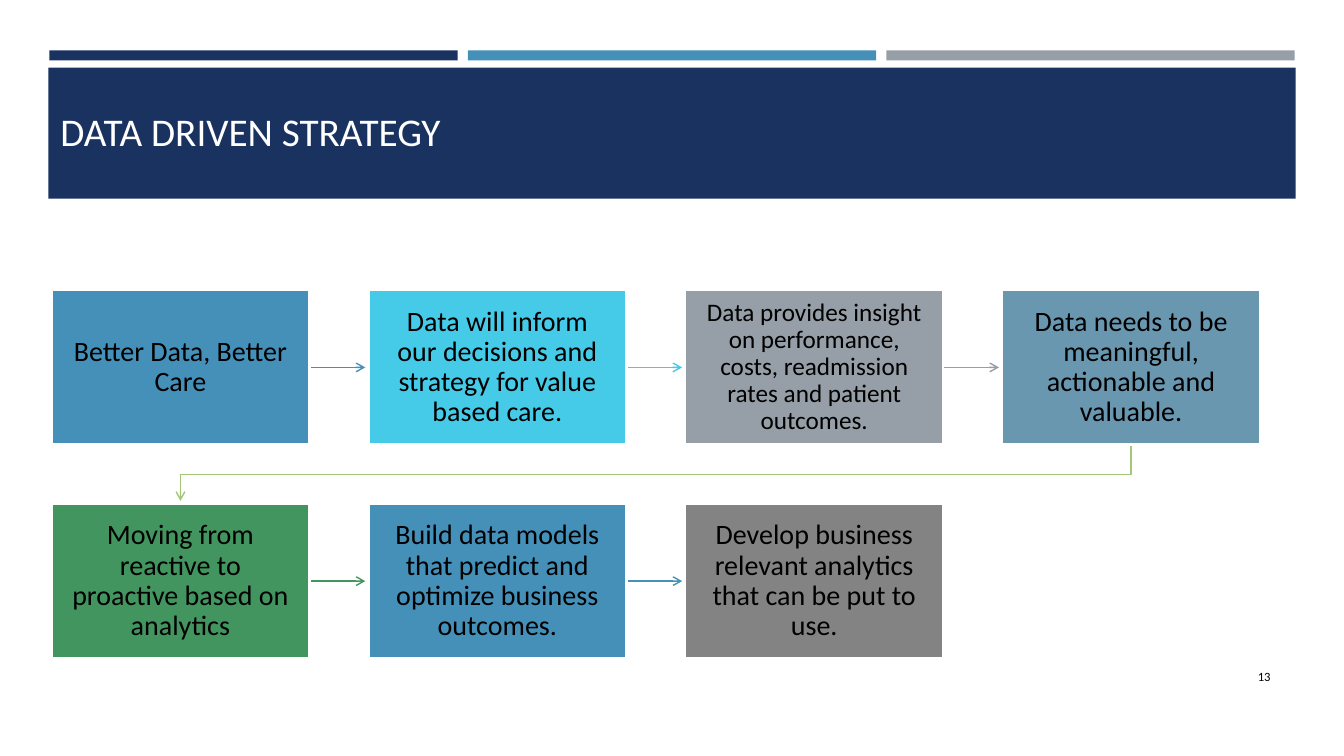
from lxml.etree import SubElement
from pptx import Presentation
from pptx.dml.color import RGBColor
from pptx.enum.shapes import MSO_CONNECTOR, MSO_SHAPE
from pptx.enum.text import MSO_ANCHOR, PP_ALIGN
from pptx.oxml.ns import qn
from pptx.util import Inches, Pt

NAVY = RGBColor(0x1A, 0x32, 0x60)
BLUE = RGBColor(0x45, 0x90, 0xB8)
CYAN = RGBColor(0x45, 0xCB, 0xE8)
SILVER = RGBColor(0x96, 0x9F, 0xA7)
STEEL = RGBColor(0x69, 0x97, 0xB0)
LIME = RGBColor(0xA2, 0xC7, 0x77)
GREEN = RGBColor(0x42, 0x95, 0x5F)
GRAY = RGBColor(0x83, 0x83, 0x83)
WHITE = RGBColor(0xFF, 0xFF, 0xFF)
BLACK = RGBColor(0, 0, 0)
FONT = "Calibri"

TITLE = "DATA DRIVEN STRATEGY"
PAGE_NUMBER = "13"
# text, fill, colour of the arrow to the next step, text size, inset
STEPS = [
    ("Better Data, Better Care", BLUE, BLUE, 20, 0.16),
    ("Data will inform our decisions and strategy for value based care.", CYAN, CYAN, 20, 0.16),
    ("Data provides insight on performance, costs, readmission rates and patient outcomes.",
     SILVER, SILVER, 18, 0.14),
    ("Data needs to be meaningful, actionable and valuable.", STEEL, LIME, 20, 0.16),
    ("Moving from reactive to proactive based on analytics", GREEN, GREEN, 20, 0.16),
    ("Build data models that predict and optimize business outcomes.", BLUE, BLUE, 20, 0.16),
    ("Develop business relevant analytics that can be put to use.", GRAY, None, 20, 0.16),
]

COLUMNS = 4
GRID_LEFT, GRID_TOP = 0.51, 2.88
COLUMN_STEP, ROW_STEP = 3.143, 2.12
BOX_WIDTH, BOX_HEIGHT = 2.56, 1.53
ARROW_GAP = 0.03
STRIPES = [NAVY, BLUE, SILVER]
STRIPE_LEFT, STRIPE_STEP, STRIPE_WIDTH = 0.49, 4.15, 4.05


def add_rectangle(page, left, top, width, height, fill):
    box = page.shapes.add_shape(MSO_SHAPE.RECTANGLE, Inches(left), Inches(top),
                                Inches(width), Inches(height))
    box.shadow.inherit = False
    box.fill.solid()
    box.fill.fore_color.rgb = fill
    box.line.fill.background()
    return box


def write(frame, text, size, color, align, anchor):
    frame.word_wrap = True
    frame.vertical_anchor = anchor
    para = frame.paragraphs[0]
    para.alignment = align
    span = para.add_run()
    span.text = text
    span.font.name = FONT
    span.font.size = Pt(size)
    span.font.color.rgb = color
    return para


def style_arrow(arrow, color):
    arrow.line.color.rgb = color
    arrow.line.width = Pt(1)
    SubElement(arrow.line._get_or_add_ln(), qn("a:tailEnd"), type="arrow")
    SubElement(arrow.element.spPr, qn("a:effectLst"))


def step_corner(index):
    row, column = divmod(index, COLUMNS)
    return GRID_LEFT + column * COLUMN_STEP, GRID_TOP + row * ROW_STEP


def add_step(page, index, text, fill, size, inset):
    box = add_rectangle(page, *step_corner(index), BOX_WIDTH, BOX_HEIGHT, fill)
    box.line.color.rgb = WHITE
    box.line.width = Pt(1.75)
    frame = box.text_frame
    frame.margin_left = frame.margin_right = Inches(inset)
    frame.margin_top = frame.margin_bottom = Inches(inset)
    para = write(frame, text, size, BLACK, PP_ALIGN.CENTER, MSO_ANCHOR.MIDDLE)
    para.line_spacing = 0.9


def add_arrow(page, index, color):
    """Link a step to the next one, with an elbow where the row ends."""
    left, top = step_corner(index)
    next_left, next_top = step_corner(index + 1)
    if top == next_top:
        middle = Inches(top + BOX_HEIGHT / 2)
        arrow = page.shapes.add_connector(
            MSO_CONNECTOR.STRAIGHT, Inches(left + BOX_WIDTH), middle,
            Inches(next_left - ARROW_GAP), middle)
    else:
        start_x, end_x = left + BOX_WIDTH / 2, next_left + BOX_WIDTH / 2
        start_y, end_y = top + BOX_HEIGHT, next_top - ARROW_GAP
        turn_y = (start_y + next_top) / 2
        outline = page.shapes.build_freeform(Inches(start_x), Inches(start_y))
        corners = [(start_x, turn_y), (end_x, turn_y), (end_x, end_y)]
        outline.add_line_segments([(Inches(x), Inches(y)) for x, y in corners], close=False)
        arrow = outline.convert_to_shape()
        arrow.fill.background()
    style_arrow(arrow, color)


def main():
    deck = Presentation()
    deck.slide_width, deck.slide_height = Inches(13.33), Inches(7.5)
    page = deck.slides.add_slide(deck.slide_layouts[5])

    for number, color in enumerate(STRIPES):
        add_rectangle(page, STRIPE_LEFT + number * STRIPE_STEP, 0.5, STRIPE_WIDTH, 0.1, color)
    add_rectangle(page, 0.48, 0.67, 12.37, 1.3, NAVY)

    title = page.shapes.title
    title.left, title.top = Inches(0.5), Inches(0.83)
    title.width, title.height = Inches(9.4), Inches(0.75)
    write(title.text_frame, TITLE, 28, WHITE, PP_ALIGN.LEFT, MSO_ANCHOR.BOTTOM)
    title.element.getparent().append(title.element)  # in front of the banner

    for index, (text, fill, arrow_color, size, inset) in enumerate(STEPS):
        if arrow_color is not None:
            add_arrow(page, index, arrow_color)
        add_step(page, index, text, fill, size, inset)

    number_box = page.shapes.add_textbox(Inches(11.55), Inches(6.51), Inches(1.15), Inches(0.4))
    write(number_box.text_frame, PAGE_NUMBER, 9, BLACK, PP_ALIGN.RIGHT, MSO_ANCHOR.MIDDLE)

    deck.save("out.pptx")


if __name__ == "__main__":
    main()
